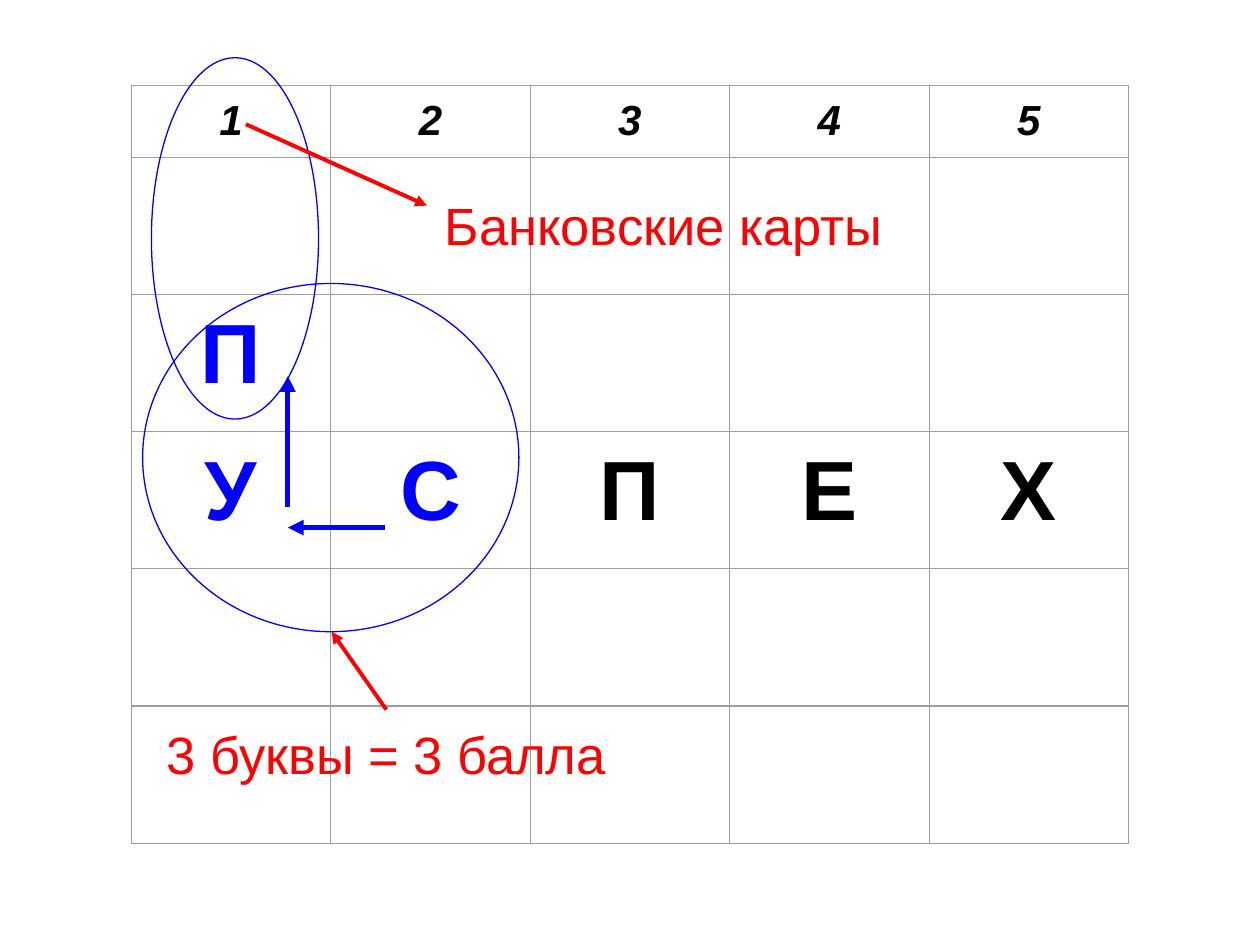
from dataclasses import dataclass

from lxml import etree
from pptx import Presentation
from pptx.dml.color import RGBColor
from pptx.enum import shapes, text
from pptx.oxml import ns
from pptx.util import Pt


@dataclass(frozen=True)
class Theme:
    font: str = "Arial"
    ink: str = "000000"
    move: str = "0000FF"
    note: str = "FF0000"
    grid: str = "9E9E9E"
    header_size: float = 24
    letter_size: float = 48
    note_size: float = 30
    thin: float = 0.75
    note_line: float = 2.25
    move_line: float = 3
    inset: float = 7.2


THEME = Theme()
HEADERS = "12345"
LETTERS = {2: "П", 3: "УСПЕХ"}
MOVE_CELLS = {(2, 0), (3, 0), (3, 1)}
HEADER_HEIGHT = 41


def color(value):
    return RGBColor.from_string(value)


def set_insets(frame):
    frame.margin_left = frame.margin_right = Pt(THEME.inset)
    frame.margin_top = frame.margin_bottom = Pt(THEME.inset)


def style_paragraph(paragraph, size, ink, bold=False, italic=False):
    font = paragraph.font
    font.name, font.size, font.bold, font.italic = THEME.font, Pt(size), bold, italic
    font.color.rgb = color(ink)


def set_borders(cell):
    properties = cell._tc.get_or_add_tcPr()
    for side in ("a:lnL", "a:lnR", "a:lnT", "a:lnB"):
        line = etree.SubElement(properties, ns.qn(side), w=str(Pt(THEME.thin)))
        fill = etree.SubElement(line, ns.qn("a:solidFill"))
        etree.SubElement(fill, ns.qn("a:srgbClr"), val=THEME.grid)


def add_letter_grid(slide, left, top, width, height):
    row_count, column_count = 6, len(HEADERS)
    table = slide.shapes.add_table(
        row_count, column_count, Pt(left), Pt(top), Pt(width), Pt(height)).table
    table.first_row = table.horz_banding = False
    for column in table.columns:
        column.width = Pt(width / column_count)
    for row in table.rows:
        row.height = Pt((height - HEADER_HEIGHT) / (row_count - 1))
    table.rows[0].height = Pt(HEADER_HEIGHT)

    for row in range(row_count):
        words = HEADERS if row == 0 else LETTERS.get(row, "")
        for column in range(column_count):
            cell = table.cell(row, column)
            set_insets(cell)
            set_borders(cell)
            cell.fill.background()
            if column < len(words):
                cell.text = words[column]
                paragraph = cell.text_frame.paragraphs[0]
                paragraph.alignment = text.PP_ALIGN.CENTER
                size = THEME.header_size if row == 0 else THEME.letter_size
                ink = THEME.move if (row, column) in MOVE_CELLS else THEME.ink
                style_paragraph(paragraph, size, ink, bold=True, italic=row == 0)


def add_ring(slide, left, top, width, height):
    ring = slide.shapes.add_shape(
        shapes.MSO_SHAPE.OVAL, Pt(left), Pt(top), Pt(width), Pt(height))
    ring.shadow.inherit = False
    ring.fill.background()
    ring.line.color.rgb = color(THEME.move)
    ring.line.width = Pt(THEME.thin)


def add_arrow(slide, start, end, ink, weight):
    arrow = slide.shapes.add_connector(
        shapes.MSO_CONNECTOR.STRAIGHT, *(Pt(value) for value in (*start, *end)))
    arrow.line.color.rgb = color(ink)
    arrow.line.width = Pt(weight)
    etree.SubElement(arrow.line._get_or_add_ln(), ns.qn("a:tailEnd"), type="triangle")
    etree.SubElement(arrow._element.spPr, ns.qn("a:effectLst"))


def add_note(slide, words, left, top, width, height, alignment, spacing=1.0):
    frame = slide.shapes.add_textbox(
        Pt(left), Pt(top), Pt(width), Pt(height)).text_frame
    frame.word_wrap = True
    set_insets(frame)
    paragraph = frame.paragraphs[0]
    paragraph.text = words
    paragraph.alignment = alignment
    paragraph.line_spacing = spacing
    style_paragraph(paragraph, THEME.note_size, THEME.note)


def add_word_moves(slide, left, top, width, height):
    """Arrows from С to У to П, with the ring around the three letters."""
    turn = left + 83
    add_arrow(slide, (turn + 55.5, top + 139.5), (turn, top + 139.5),
              THEME.move, THEME.move_line)
    add_arrow(slide, (turn, top + 127.5), (turn, top + 53),
              THEME.move, THEME.move_line)
    add_ring(slide, left, top, width, height)


def add_score_note(slide, left, top, width, height):
    add_note(slide, "3 буквы = 3 балла", left, top, width, height,
             text.PP_ALIGN.CENTER)
    add_arrow(slide, (left + width / 2, top), (left + 108, top - 44.5),
              THEME.note, THEME.note_line)


def add_topic_note(slide, left, top, width, height):
    """Ring around the first column, with an arrow to the topic's name."""
    add_ring(slide, left, top, width, height)
    add_note(slide, "Банковские карты", left + 160.5, top + 65, 374.5, 64,
             text.PP_ALIGN.JUSTIFY, spacing=1.15)
    add_arrow(slide, (left + 54, top + 38), (left + 157.5, top + 84.5),
              THEME.note, THEME.note_line)


def main():
    presentation = Presentation()
    presentation.slide_width, presentation.slide_height = Pt(720), Pt(540)
    slide = presentation.slides.add_slide(presentation.slide_layouts[6])
    add_letter_grid(slide, 75, 48.75, 570, 433)
    add_word_moves(slide, 81.5, 162, 215, 199)
    add_score_note(slide, 81.5, 405.5, 278.5, 64)
    add_topic_note(slide, 86.5, 33, 95.5, 206.5)
    presentation.save("out.pptx")


if __name__ == "__main__":
    main()
